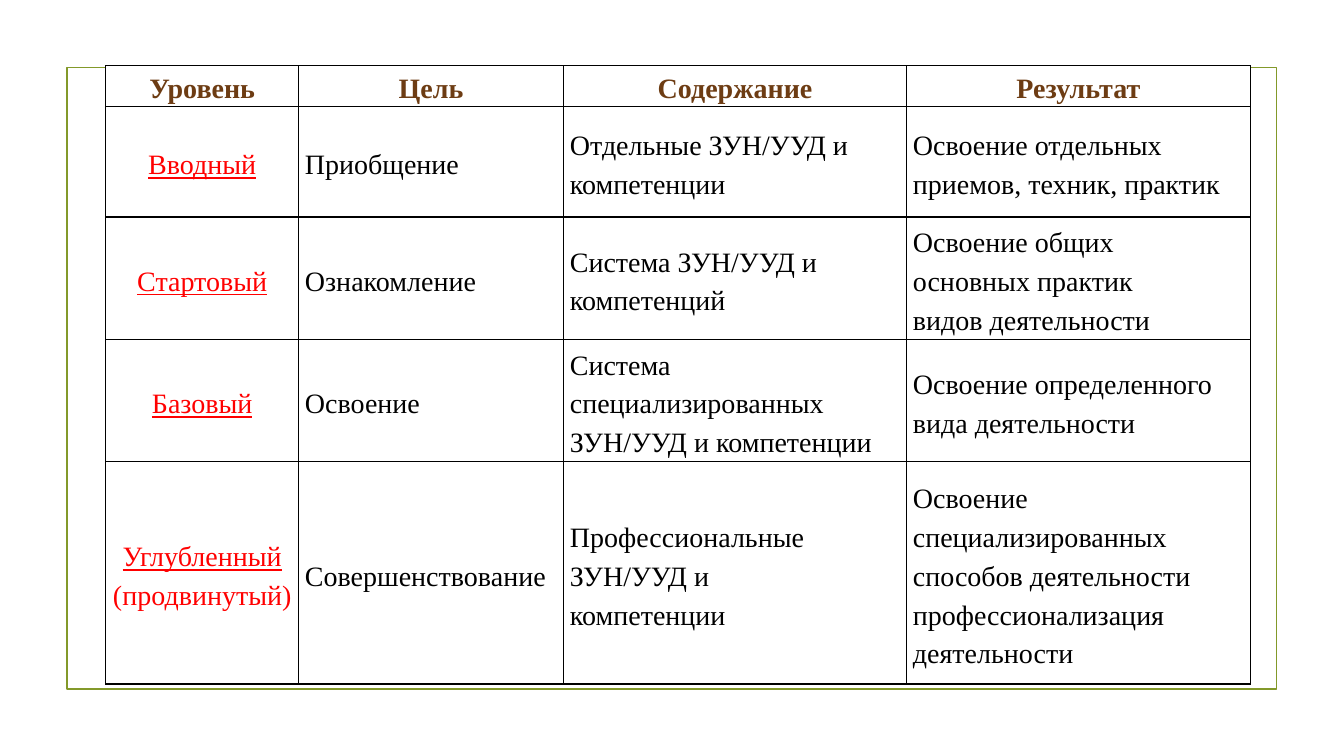
from lxml.etree import SubElement
from pptx import Presentation
from pptx.dml.color import RGBColor
from pptx.enum.shapes import MSO_SHAPE
from pptx.enum.text import MSO_ANCHOR, PP_ALIGN
from pptx.oxml.ns import qn
from pptx.util import Pt

# Content: a cell is a list of paragraphs, "|" starts the part not underlined
HEAD = ["Уровень", "Цель", "Содержание", "Результат"]
LEVELS = [
    (["Вводный"], ["Приобщение"], ["Отдельные ЗУН/УУД и компетенции"],
     ["Освоение отдельных приемов, техник, практик"]),
    (["Стартовый"], ["Ознакомление"], ["Система ЗУН/УУД и компетенций"],
     ["Освоение общих", "основных практик", "видов деятельности"]),
    (["Базовый"], ["Освоение"],
     ["Система специализированных ЗУН/УУД и компетенции"],
     ["Освоение определенного вида деятельности"]),
    (["Углубленный| (продвинутый)"], ["Совершенствование"],
     ["Профессиональные ЗУН/УУД и", "компетенции"],
     ["Освоение специализированных способов деятельности "
      "профессионализация деятельности"]),
]

# Theme and measures, in points
THEME = {"font": "Times New Roman", "size": 20, "lead": 1.25,
         "head": "6D3C13", "level": "FF0000", "body": "000000",
         "paper": "FFFFFF", "frame": "83992A", "grid": "000000"}
SLIDE = (960, 540)
FRAME = (47.75, 48.25, 864, 444)
LEFT, TOP = 75.6, 47
COLS = [137.75, 189.25, 245, 245.5]
ROWS = [28.8, 79.2, 87.4, 87.4, 158.8]
INSET = 4.5

# Formats by role
LOOKS = {
    "head": {"bold": True, "underline": False},
    "level": {"bold": False, "underline": True},
    "body": {"bold": False, "underline": False},
}


def apply(item, looks):
    for name, value in looks.items():
        setattr(item, name, value)


def border(cell):
    props = cell._tc.get_or_add_tcPr()
    for spot, side in enumerate(("lnL", "lnR", "lnT", "lnB")):
        line = SubElement(props, qn("a:" + side), w=str(Pt(1)))
        fill = SubElement(line, qn("a:solidFill"))
        SubElement(fill, qn("a:srgbClr"), val=THEME["grid"])
        props.insert(spot, line)


def write(cell, texts, role, align):
    frame = cell.text_frame
    for num, text in enumerate(texts):
        para = frame.add_paragraph() if num else frame.paragraphs[0]
        apply(para, {"alignment": align, "line_spacing": THEME["lead"]})
        for part, words in enumerate(text.split("|")):
            run = para.add_run()
            run.text = words
            apply(run.font, {"name": THEME["font"], "size": Pt(THEME["size"]),
                             **LOOKS[role]})
            run.font.color.rgb = RGBColor.from_string(THEME[role])
            if part:
                run.font.underline = False


def dress(cell, anchor):
    apply(cell, {"margin_left": Pt(INSET), "margin_right": Pt(INSET),
                 "margin_top": 0, "margin_bottom": 0,
                 "vertical_anchor": anchor})
    cell.fill.solid()
    cell.fill.fore_color.rgb = RGBColor.from_string(THEME["paper"])
    border(cell)


def main():
    deck = Presentation()
    apply(deck, {"slide_width": Pt(SLIDE[0]), "slide_height": Pt(SLIDE[1])})
    slide = deck.slides.add_slide(deck.slide_layouts[6])

    # Green frame
    frame = slide.shapes.add_shape(MSO_SHAPE.RECTANGLE, *map(Pt, FRAME))
    frame.shadow.inherit = False
    frame.fill.background()
    frame.line.color.rgb = RGBColor.from_string(THEME["frame"])
    frame.line.width = Pt(1.25)

    # Table of levels
    table = slide.shapes.add_table(
        len(ROWS), len(COLS), Pt(LEFT), Pt(TOP),
        Pt(sum(COLS)), Pt(sum(ROWS))).table
    apply(table, {"first_row": False, "horz_banding": False})
    for col, width in zip(table.columns, COLS):
        col.width = Pt(width)
    for row, height in zip(table.rows, ROWS):
        row.height = Pt(height)

    # Cells
    aligns = [PP_ALIGN.CENTER, PP_ALIGN.JUSTIFY, PP_ALIGN.LEFT, PP_ALIGN.LEFT]
    for col, title in enumerate(HEAD):
        cell = table.cell(0, col)
        write(cell, [title], "head", PP_ALIGN.CENTER)
        dress(cell, MSO_ANCHOR.TOP)
    for row, level in enumerate(LEVELS, 1):
        for col, texts in enumerate(level):
            cell = table.cell(row, col)
            write(cell, texts, "body" if col else "level", aligns[col])
            dress(cell, MSO_ANCHOR.MIDDLE)

    deck.save("out.pptx")


if __name__ == "__main__":
    main()
